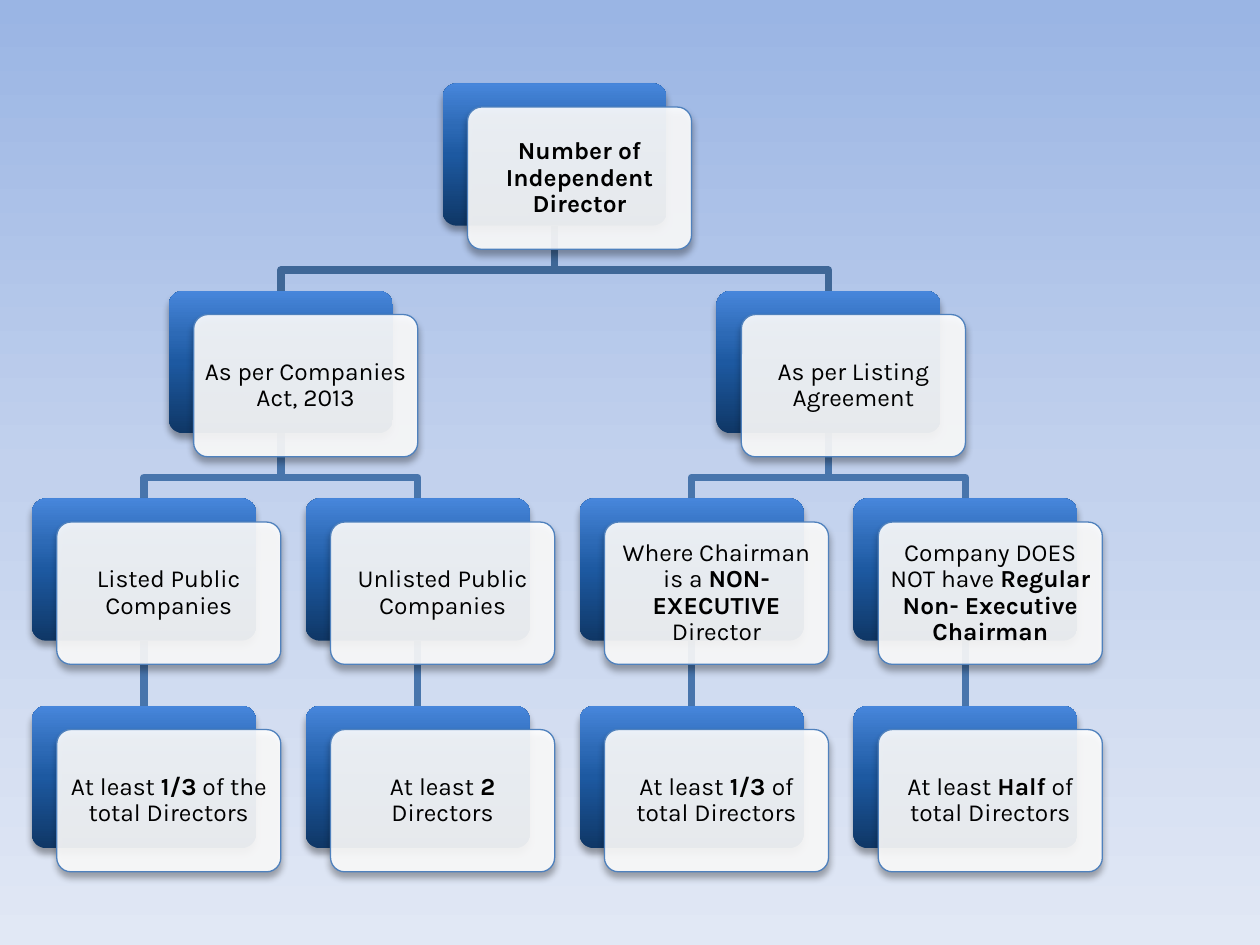
from dataclasses import dataclass

from lxml import etree
from pptx import Presentation
from pptx.dml.color import RGBColor
from pptx.enum.shapes import MSO_CONNECTOR, MSO_SHAPE
from pptx.enum.text import MSO_ANCHOR, PP_ALIGN
from pptx.oxml.ns import qn
from pptx.util import Pt

ROUNDED = MSO_SHAPE.ROUNDED_RECTANGLE
STRAIGHT = MSO_CONNECTOR.STRAIGHT
MIDDLE = MSO_ANCHOR.MIDDLE
CENTER = PP_ALIGN.CENTER
TOP_SIDE, BOTTOM_SIDE = 0, 2


@dataclass(frozen=True)
class Theme:
    font: str = "Karla"
    text_size: float = 14
    text: str = "000000"
    card: str = "FFFFFF"
    card_opacity: int = 90
    card_line: str = "4F81BD"
    card_line_width: float = 0.75
    root_branch: str = "3F6797"
    branch: str = "4875AC"
    branch_width: float = 4.33
    backdrop: tuple = ((0, "9AB5E4"), (50, "C2D1ED"), (100, "E1E8F5"))
    plate: tuple = ((0, "0F3766"), (50, "1D59A1"), (70, "2D6AB6"), (100, "4786DB"))


@dataclass(frozen=True)
class Node:
    text: str  # stretches between asterisks are bold
    column: float
    row: int
    parent: int = -1  # index in NODES


THEME = Theme()

# Grid of the tree, in points
LEFT, TOP = 18.2, 47.7
COLUMN_STEP, ROW_STEP = 156.48, 118.57
CARD_WIDTH, CARD_HEIGHT = 128.04, 81.3
CARD_SHIFT_X, CARD_SHIFT_Y = 14.23, 13.5
BEND = 0.68  # share of the row gap above the crossbar

NODES = (
    Node("*Number of Independent Director*", 1.5, 0),
    Node("As per Companies Act, 2013", 0.5, 1, 0),
    Node("As per Listing Agreement", 2.5, 1, 0),
    Node("Listed Public Companies", 0, 2, 1),
    Node("Unlisted Public Companies", 1, 2, 1),
    Node("Where Chairman is a *NON- EXECUTIVE *Director", 2, 2, 2),
    Node("Company DOES NOT have *Regular Non- Executive Chairman*", 3, 2, 2),
    Node("At least *1/3* of the total Directors", 0, 3, 3),
    Node("At least* 2 *Directors", 1, 3, 4),
    Node("At least* 1/3 *of total Directors", 2, 3, 5),
    Node("At least *Half* of total Directors", 3, 3, 6),
)


def color(value):
    return RGBColor.from_string(value)


def set_all(target, values):
    for name, value in values.items():
        setattr(target, name, value)


def corner(node):
    return LEFT + node.column * COLUMN_STEP, TOP + node.row * ROW_STEP


def set_gradient(fill, element, stops, angle):
    fill.gradient()
    gradient = next(element.iter(qn("a:gradFill")))
    stop_list = gradient.find(qn("a:gsLst"))
    for stop in list(stop_list):
        stop_list.remove(stop)
    for position, value in stops:
        stop = etree.SubElement(stop_list, qn("a:gs"), pos=str(position * 1000))
        etree.SubElement(stop, qn("a:srgbClr"), val=value)
    gradient.find(qn("a:lin")).set("ang", str(angle * 60000))


def add_shadow(shape):
    shape.shadow.inherit = False
    effects = shape._element.spPr.find(qn("a:effectLst"))
    shadow = etree.SubElement(effects, qn("a:outerShdw"), blurRad=str(Pt(4)),
                              dist=str(Pt(3)), dir="5400000", rotWithShape="0")
    shade = etree.SubElement(shadow, qn("a:srgbClr"), val="000000")
    etree.SubElement(shade, qn("a:alpha"), val="35000")


def add_rounded(page, x, y):
    shape = page.shapes.add_shape(ROUNDED, Pt(x), Pt(y), Pt(CARD_WIDTH), Pt(CARD_HEIGHT))
    shape.adjustments[0] = 0.1
    add_shadow(shape)
    return shape


def add_plate(page, x, y):
    plate = add_rounded(page, x, y)
    set_gradient(plate.fill, plate._element, THEME.plate, 270)
    plate.line.fill.background()
    return plate


def add_card(page, x, y, text):
    card = add_rounded(page, x, y)
    card.fill.solid()
    card.fill.fore_color.rgb = color(THEME.card)
    solid = card._element.spPr.find(qn("a:solidFill"))
    etree.SubElement(solid[0], qn("a:alpha"), val=str(THEME.card_opacity * 1000))
    card.line.color.rgb = color(THEME.card_line)
    card.line.width = Pt(THEME.card_line_width)
    write_text(card.text_frame, text)


def write_text(frame, text):
    margins = {f"margin_{side}": Pt(2) for side in ("left", "top", "right", "bottom")}
    set_all(frame, {"word_wrap": True, "vertical_anchor": MIDDLE, **margins})
    para = frame.paragraphs[0]
    set_all(para, {"alignment": CENTER, "line_spacing": 0.9})
    for index, part in enumerate(text.split("*")):
        if part:
            span = para.add_run()
            span.text = part
            set_all(span.font, {"name": THEME.font, "size": Pt(THEME.text_size),
                                "bold": index % 2 == 1})
            span.font.color.rgb = color(THEME.text)


def add_branch(page, parent, child):
    """Draw a straight connector, or an elbow where the columns differ."""
    start_x, start_y = corner(parent)
    end_x, end_y = corner(child)
    start_x, end_x = start_x + CARD_WIDTH / 2, end_x + CARD_WIDTH / 2
    start_y += CARD_HEIGHT
    if parent.column == child.column:
        branch = page.shapes.add_connector(STRAIGHT, Pt(start_x), Pt(start_y),
                                           Pt(end_x), Pt(end_y))
        etree.SubElement(branch._element.spPr, qn("a:effectLst"))
    else:
        bend_y = start_y + BEND * (end_y - start_y)
        points = ((start_x, bend_y), (end_x, bend_y), (end_x, end_y))
        builder = page.shapes.build_freeform(Pt(start_x), Pt(start_y))
        builder.add_line_segments([(Pt(x), Pt(y)) for x, y in points], close=False)
        branch = builder.convert_to_shape()
        branch.fill.background()
        branch.shadow.inherit = False
    branch.line.color.rgb = color(THEME.branch if parent.row else THEME.root_branch)
    branch.line.width = Pt(THEME.branch_width)
    return branch


def add_node(page, node):
    x, y = corner(node)
    plate = add_plate(page, x, y)
    add_card(page, x + CARD_SHIFT_X, y + CARD_SHIFT_Y, node.text)
    return plate


def main():
    deck = Presentation()
    set_all(deck, {"slide_width": Pt(720), "slide_height": Pt(540)})
    page = deck.slides.add_slide(deck.slide_layouts[6])
    set_gradient(page.background.fill, page._element, THEME.backdrop, 90)

    # Branches lie behind the nodes
    children = NODES[1:]
    branches = [add_branch(page, NODES[child.parent], child) for child in children]
    plates = [add_node(page, node) for node in NODES]

    # Join the straight branches to their plates
    for child, branch, plate in zip(children, branches, plates[1:]):
        if NODES[child.parent].column == child.column:
            branch.begin_connect(plates[child.parent], BOTTOM_SIDE)
            branch.end_connect(plate, TOP_SIDE)

    deck.save("out.pptx")


if __name__ == "__main__":
    main()
